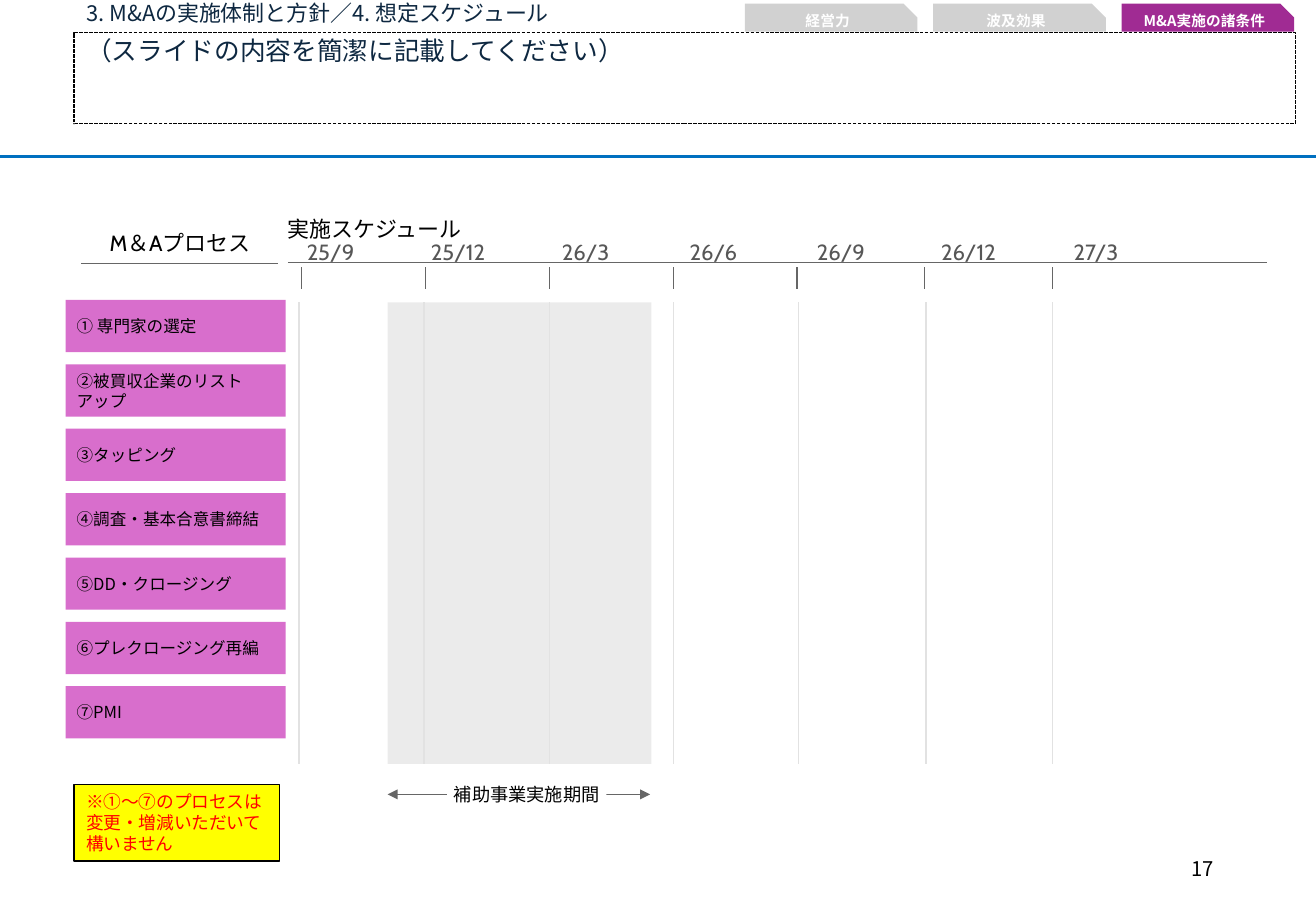
from pptx import Presentation
from pptx.dml.color import RGBColor
from pptx.enum.dml import MSO_LINE
from pptx.enum.shapes import MSO_CONNECTOR, MSO_SHAPE
from pptx.enum.text import MSO_ANCHOR, MSO_AUTO_SIZE, PP_ALIGN
from pptx.oxml.ns import qn
from pptx.util import Inches, Pt
from lxml.etree import SubElement

COLORS = {
    "navy": "0E2841", "black": "000000", "white": "FFFFFF", "blue": "0070C0",
    "pink": "D86ECC", "purple": "A02B93", "tab": "D1D1D1", "period": "BFBFBF",
    "line": "666666", "grid": "E2E2E2", "month": "575757",
    "yellow": "FFFF00", "red": "FF0000",
}
CJK, LATIN = "Noto Sans CJK JP", "Cabin"
LEFT, CENTER, RIGHT = PP_ALIGN.LEFT, PP_ALIGN.CENTER, PP_ALIGN.RIGHT
TOP, MIDDLE, BOTTOM = MSO_ANCHOR.TOP, MSO_ANCHOR.MIDDLE, MSO_ANCHOR.BOTTOM
DEFAULT_INSETS = (0.1, 0.05, 0.1, 0.05)
TIGHT_INSETS = (0.09, 0.04, 0.09, 0.04)


def rgb(name):
    return RGBColor.from_string(COLORS[name])


class ScheduleSlide:
    def __init__(self, prs):
        self.s = prs.slides.add_slide(prs.slide_layouts[5])

    def set_text(self, sp, text, size, color="black", font=CJK, align=LEFT,
                 anchor=MIDDLE, insets=DEFAULT_INSETS, wrap=True, bold=False,
                 spacing=None):
        tf = sp.text_frame
        tf.text = text
        tf.auto_size = MSO_AUTO_SIZE.NONE
        tf.word_wrap = wrap
        tf.vertical_anchor = anchor
        (tf.margin_left, tf.margin_top,
         tf.margin_right, tf.margin_bottom) = map(Inches, insets)
        p = tf.paragraphs[0]
        p.alignment = align
        p.line_spacing = spacing
        r = p.runs[0]
        r.font.size = Pt(size)
        r.font.bold = bold
        r.font.name = font
        r.font.color.rgb = rgb(color)
        SubElement(r.font._element, qn("a:ea"), typeface=CJK)

    def title(self, box, text, size, **style):
        sp = self.s.shapes.title
        sp.left, sp.top, sp.width, sp.height = map(Inches, box)
        self.set_text(sp, text, size, **style)

    def text(self, box, text, size, **style):
        sp = self.s.shapes.add_textbox(*map(Inches, box))
        self.set_text(sp, text, size, **style)

    def shape(self, box, fill=None, line=None, kind=MSO_SHAPE.RECTANGLE):
        sp = self.s.shapes.add_shape(kind, *map(Inches, box))
        sp.shadow.inherit = False
        if fill:
            sp.fill.solid()
            sp.fill.fore_color.rgb = rgb(fill)
        else:
            sp.fill.background()
        if line:
            sp.line.color.rgb = rgb(line)
            sp.line.width = Pt(0.75)
        else:
            sp.line.fill.background()
        return sp

    def line(self, x1, y1, x2, y2, color="line", width=0.75, arrows=False):
        c = self.s.shapes.add_connector(
            MSO_CONNECTOR.STRAIGHT, *map(Inches, (x1, y1, x2, y2)))
        c.line.color.rgb = rgb(color)
        c.line.width = Pt(width)
        if arrows:
            for end in ("a:headEnd", "a:tailEnd"):
                SubElement(c.line._get_or_add_ln(), qn(end), type="triangle")
        SubElement(c._element.spPr, qn("a:effectLst"))


def add_header(slide):
    slide.line(0, 1.29, 10.83, 1.29, "blue", 2)
    slide.title((0.61, -0.03, 5.61, 0.3), "3. M&Aの実施体制と方針／4. 想定スケジュール",
                13, color="navy", anchor=TOP, spacing=0.9)
    summary = slide.shape((0.61, 0.27, 10.05, 0.75), line="black")
    summary.line.dash_style = MSO_LINE.SQUARE_DOT
    slide.set_text(summary, "（スライドの内容を簡潔に記載してください）", 15.2,
                   color="navy", anchor=TOP, spacing=0.9)
    tabs = [("経営力", "tab"), ("波及効果", "tab"), ("M&A実施の諸条件", "purple")]
    for i, (name, fill) in enumerate(tabs):
        tab = slide.shape((6.13 + 1.55 * i, 0.03, 1.42, 0.23), fill,
                          kind=MSO_SHAPE.SNIP_1_RECTANGLE)
        tab.adjustments[0] = 0.5
        slide.set_text(tab, name, 8.7, color="white", align=CENTER, bold=True)


def add_processes(slide):
    slide.text((0.67, 2.1, 1.62, 0.05), "M＆Aプロセス", 13, font=LATIN,
               align=CENTER, anchor=BOTTOM, insets=(0, 0, 0, 0.04))
    slide.line(0.67, 2.17, 2.29, 2.17)
    processes = ["① 専門家の選定", "②被買収企業のリストアップ", "③タッピング",
                 "④調査・基本合意書締結", "⑤DD・クロージング",
                 "⑥プレクロージング再編", "⑦PMI"]
    for i, name in enumerate(processes):
        sp = slide.shape((0.54, 2.47 + 0.53 * i, 1.81, 0.43), "pink")
        slide.set_text(sp, name, 9.8, insets=TIGHT_INSETS)
    note = slide.shape((0.61, 6.46, 1.69, 0.63), "yellow", "black")
    slide.set_text(note, "※①～⑦のプロセスは変更・増減いただいて構いません", 10.5,
                   color="red", anchor=TOP)


def add_timeline(slide):
    period = slide.shape((3.19, 2.49, 2.17, 3.8), "period")
    color = period.fill._xPr.find(qn("a:solidFill"))[0]
    SubElement(color, qn("a:alpha"), val="30000")

    slide.text((2.37, 2.1, 8.06, 0.05), "実施スケジュール", 13, font=LATIN,
               anchor=BOTTOM, insets=(0, 0, 0, 0.26))
    slide.line(2.37, 2.16, 10.43, 2.16)
    months = ["25/9", "25/12", "26/3", "26/6", "26/9", "26/12", "27/3"]
    ticks = [2.48, 3.5, 4.52, 5.54, 6.56, 7.61, 8.66]
    grid = [2.46, 3.49, 4.52, 5.54, 6.57, 7.62, 8.66]
    for i, (month, tick_x, grid_x) in enumerate(zip(months, ticks, grid)):
        slide.text((2.37 + 1.05 * i, 1.95, 0.7, 0.24), month, 13, font=LATIN,
                   color="month", align=CENTER, wrap=False)
        slide.line(tick_x, 2.2, tick_x, 2.38)
        slide.line(grid_x, 2.49, grid_x, 6.29, "grid")

    slide.line(3.19, 6.54, 5.35, 6.54, arrows=True)
    label = slide.shape((3.68, 6.36, 1.31, 0.35), "white")
    slide.set_text(label, "補助事業実施期間", 10.8, font=LATIN, align=CENTER,
                   insets=TIGHT_INSETS, wrap=False)


def main():
    prs = Presentation()
    prs.slide_width, prs.slide_height = Inches(10.83), Inches(7.5)
    slide = ScheduleSlide(prs)
    add_header(slide)
    add_processes(slide)
    add_timeline(slide)
    slide.text((7.65, 6.95, 2.44, 0.4), "17", 12, align=RIGHT)
    prs.save("out.pptx")


if __name__ == "__main__":
    main()
